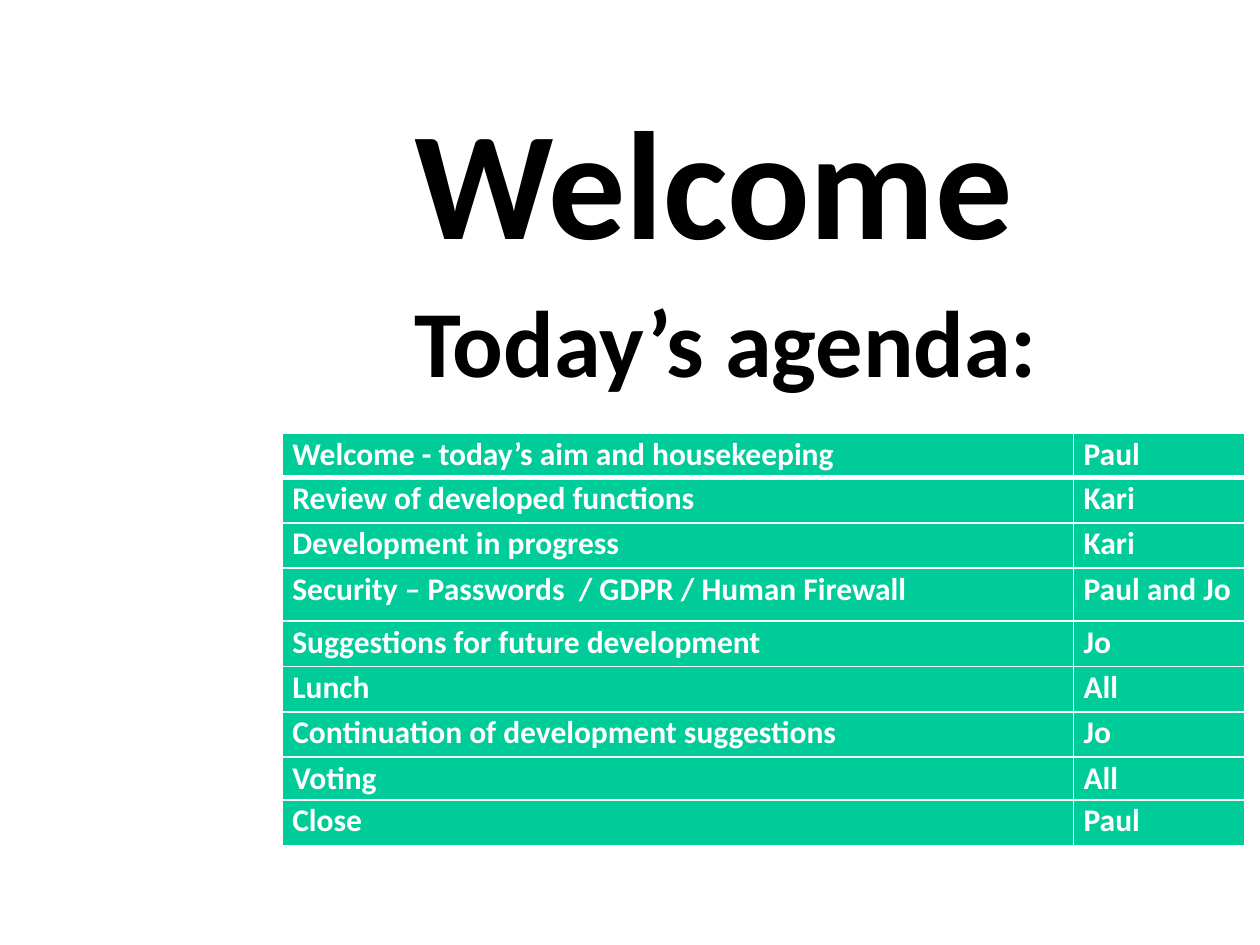
from lxml import etree
from pptx import Presentation
from pptx import util as u
from pptx.dml.color import RGBColor
from pptx.oxml import ns

COLORS = {"heading": "000000", "row": "00CC99", "light": "FFFFFF"}
FONT = "Calibri"
HEADINGS = [("Welcome", 88, 0), ("Today’s agenda:", 54, 7)]
AGENDA = [
    ("Welcome - today’s aim and housekeeping", "Paul"),
    ("Review of developed functions", "Kari"),
    ("Development in progress", "Kari"),
    ("Security – Passwords  / GDPR / Human Firewall", "Paul and Jo"),
    ("Suggestions for future development", "Jo"),
    ("Lunch", "All"),
    ("Continuation of development suggestions", "Jo"),
    ("Voting", "All"),
    ("Close", "Paul"),
]
COLUMN_WIDTHS = [6.28, 1.36]
ROW_HEIGHT = 0.36
SPECIAL_HEIGHTS = {0: 0.35, 3: 0.42, 7: 0.34}


def write(paragraph, text, size, color, before=0, spacing=1.0):
    paragraph.text = text
    paragraph.space_before = u.Pt(before)
    paragraph.line_spacing = spacing
    font = paragraph.font
    font.name, font.size, font.bold = FONT, u.Pt(size), True
    font.color.rgb = RGBColor.from_string(color)


def add_borders(cell, widths):
    properties = cell._tc.get_or_add_tcPr()
    for position, (side, width) in enumerate(widths.items()):
        line = etree.Element(ns.qn(f"a:ln{side}"), w=str(u.Pt(width)))
        fill = etree.SubElement(line, ns.qn("a:solidFill"))
        etree.SubElement(fill, ns.qn("a:srgbClr"), val=COLORS["light"])
        properties.insert(position, line)


def add_headings(slide):
    box = slide.shapes.add_textbox(*map(u.Inches, (3.19, 0.63, 7.42, 4.5)))
    frame = box.text_frame
    frame.word_wrap = True
    for index, (text, size, before) in enumerate(HEADINGS):
        paragraph = frame.add_paragraph() if index else frame.paragraphs[0]
        write(paragraph, text, size, COLORS["heading"], before=before)


def add_agenda(slide):
    heights = [SPECIAL_HEIGHTS.get(row, ROW_HEIGHT) for row in range(len(AGENDA))]
    area = (2.24, 3.44, sum(COLUMN_WIDTHS), sum(heights))
    agenda = slide.shapes.add_table(
        len(AGENDA), len(COLUMN_WIDTHS), *map(u.Inches, area)).table
    for column, width in zip(agenda.columns, COLUMN_WIDTHS):
        column.width = u.Inches(width)
    for row, (entry, height) in enumerate(zip(AGENDA, heights)):
        agenda.rows[row].height = u.Inches(height)
        for column, text in enumerate(entry):
            cell = agenda.cell(row, column)
            cell.margin_left = cell.margin_right = u.Inches(0.08)
            cell.margin_top = cell.margin_bottom = 0
            cell.fill.solid()
            cell.fill.fore_color.rgb = RGBColor.from_string(COLORS["row"])
            write(cell.text_frame.paragraphs[0], text, 18, COLORS["light"], spacing=1.05)
            add_borders(cell, {"L": 1, "R": 1, "T": 3 if row == 1 else 1,
                               "B": 3 if row == 0 else 1})


def main():
    deck = Presentation()
    deck.slide_width, deck.slide_height = u.Inches(10), u.Inches(7.5)
    slide = deck.slides.add_slide(deck.slide_layouts[6])
    add_headings(slide)
    add_agenda(slide)
    deck.save("out.pptx")


if __name__ == "__main__":
    main()
